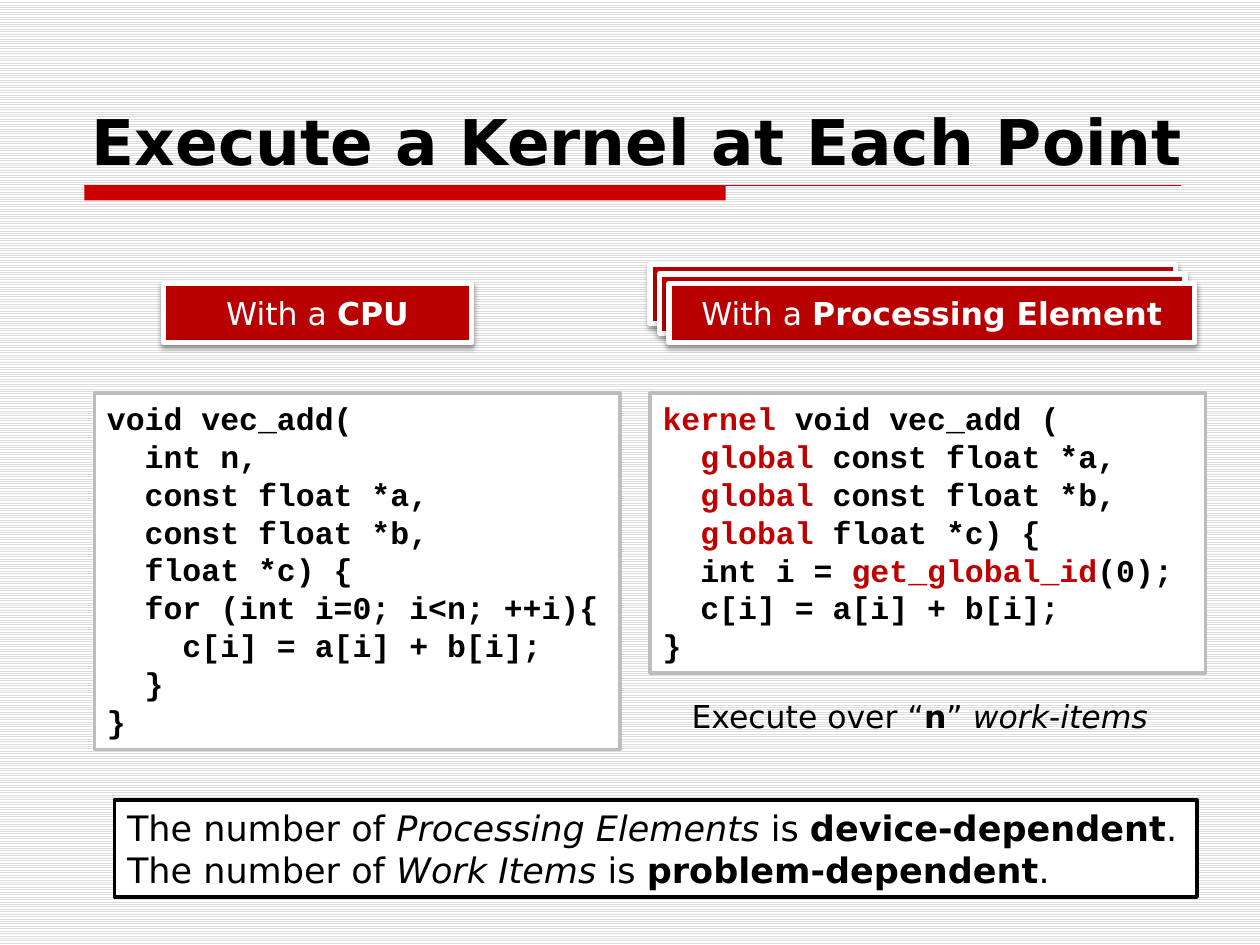
import pptx
import pptx.dml.color
import pptx.enum.dml
import pptx.enum.shapes
import pptx.enum.text
import pptx.oxml
import pptx.oxml.ns
import pptx.util
from pptx.util import Inches

SANS = "DejaVu Sans"
MONO = "Courier New"
KEYWORD = {"color": "C00000"}
BOLD = {"bold": True}
ITALIC = {"italic": True}

CPU_CODE = [
    ["void vec_add(\n  int n,\n  const float *a,\n  const float *b,\n  float *c) {"],
    ["  for (int i=0; i<n; ++i){"],
    ["    c[i] = a[i] + b[i];"],
    ["  }"],
    ["}"],
]
KERNEL_CODE = [
    [("kernel", KEYWORD), " void vec_add (\n  ",
     ("global", KEYWORD), " const float *a,\n  ",
     ("global", KEYWORD), " const float *b,\n  ",
     ("global", KEYWORD), " float *c) {"],
    ["  int i = ", ("get_global_id", KEYWORD), "(0);"],
    ["  c[i] = a[i] + b[i];"],
    ["}"],
]
WORK_ITEMS = [["Execute over “", ("n", BOLD), "” ", ("work-items", ITALIC)]]
SUMMARY = [[
    "The number of ", ("Processing Elements ", ITALIC), "is ", ("device-dependent", BOLD),
    ".\nThe number of ", ("Work Items", ITALIC), " is ", ("problem-dependent", BOLD), ".",
]]


def rgb(value):
    return pptx.dml.color.RGBColor.from_string(value)


def write_text(shape, paragraphs, align="LEFT", anchor="TOP", wrap=True, grow=False, **style):
    frame = shape.text_frame
    frame.word_wrap = wrap
    frame.vertical_anchor = pptx.enum.text.MSO_ANCHOR[anchor]
    if grow:
        frame.auto_size = pptx.enum.text.MSO_AUTO_SIZE.SHAPE_TO_FIT_TEXT
    for index, spans in enumerate(paragraphs):
        paragraph = frame.add_paragraph() if index else frame.paragraphs[0]
        paragraph.alignment = pptx.enum.text.PP_ALIGN[align]
        for span in spans:
            text, changes = (span, {}) if isinstance(span, str) else span
            write_span(paragraph, text, **{**style, **changes})


def write_span(paragraph, text, size=18, font=SANS, color="000000", bold=False, italic=False):
    for index, line in enumerate(text.split("\n")):
        if index:
            paragraph.add_line_break()
        run = paragraph.add_run()
        run.text = line
        run.font.size = pptx.util.Pt(size)
        run.font.name = font
        run.font.bold = bold
        run.font.italic = italic
        run.font.color.rgb = rgb(color)


def add_rectangle(slide, box, fill, line=None, width=2):
    shape = slide.shapes.add_shape(
        pptx.enum.shapes.MSO_SHAPE.RECTANGLE, *map(Inches, box))
    shape.shadow.inherit = False
    shape.fill.solid()
    shape.fill.fore_color.rgb = rgb(fill)
    if line:
        shape.line.color.rgb = rgb(line)
        shape.line.width = pptx.util.Pt(width)
    else:
        shape.line.fill.background()
    return shape


def add_shadow(shape):
    effects = shape._element.spPr.find(pptx.oxml.ns.qn("a:effectLst"))
    effects.append(pptx.oxml.parse_xml(
        f'<a:outerShdw {pptx.oxml.ns.nsdecls("a")} blurRad="39370" dist="20320" '
        'dir="5400000" rotWithShape="0"><a:srgbClr val="000000">'
        '<a:alpha val="38000"/></a:srgbClr></a:outerShdw>'))


def add_background(slide):
    fill = slide.background.fill
    fill.patterned()
    fill.pattern = pptx.enum.dml.MSO_PATTERN.LIGHT_HORIZONTAL
    fill.fore_color.rgb = rgb("DDDDDD")
    fill.back_color.rgb = rgb("FFFFFF")


def add_title_rule(slide, box):
    left, top, width, height = box
    add_rectangle(slide, (left, top, 5.09, height), "CC0000")
    rule = slide.shapes.add_connector(
        pptx.enum.shapes.MSO_CONNECTOR.STRAIGHT,
        Inches(left), Inches(top), Inches(left + width), Inches(top))
    rule.line.color.rgb = rgb("CC0000")
    rule.line.width = pptx.util.Pt(0.75)
    properties = rule._element.spPr
    properties.append(properties.makeelement(pptx.oxml.ns.qn("a:effectLst"), {}))


def add_text_box(slide, box, paragraphs, **style):
    shape = slide.shapes.add_textbox(*map(Inches, box))
    write_text(shape, paragraphs, **style)


def add_code_panel(slide, box, code):
    panel = add_rectangle(slide, box, "FFFFFF", "BDBDBD")
    write_text(panel, code, grow=True, font=MONO, bold=True)


def add_badge(slide, box, name, copies=1, step=0.075):
    left, top, width, height = box
    for index in range(copies):
        offset = step * index
        badge = add_rectangle(
            slide, (left + offset, top + offset, width, height), "B90000", "FFFFFF", 3)
        add_shadow(badge)
    write_text(badge, [["With a ", (name, BOLD)]],
               align="CENTER", anchor="MIDDLE", color="FFFFFF")


def add_summary(slide, box):
    panel = add_rectangle(slide, box, "FFFFFF", "000000")
    write_text(panel, SUMMARY, wrap=False, grow=True, size=20)


def main():
    presentation = pptx.Presentation()
    presentation.slide_width = Inches(10)
    presentation.slide_height = Inches(7.5)
    slide = presentation.slides.add_slide(presentation.slide_layouts[6])

    add_background(slide)
    add_title_rule(slide, (0.67, 1.47, 8.7, 0.12))
    add_text_box(slide, (0.63, 0.13, 9.25, 1.33), [["Execute a Kernel at Each Point"]],
                 anchor="BOTTOM", size=36, bold=True)
    add_code_panel(slide, (0.75, 3.12, 4.17, 2.83), CPU_CODE)
    add_code_panel(slide, (5.16, 3.12, 4.41, 2.22), KERNEL_CODE)
    add_badge(slide, (1.3, 2.25, 2.44, 0.47), "CPU")
    add_badge(slide, (5.16, 2.1, 4.17, 0.47), "Processing Element", copies=3)
    add_text_box(slide, (5.39, 5.48, 3.83, 0.4), WORK_ITEMS, wrap=False, grow=True)
    add_summary(slide, (0.91, 6.35, 8.59, 0.77))
    presentation.save("out.pptx")


if __name__ == "__main__":
    main()
